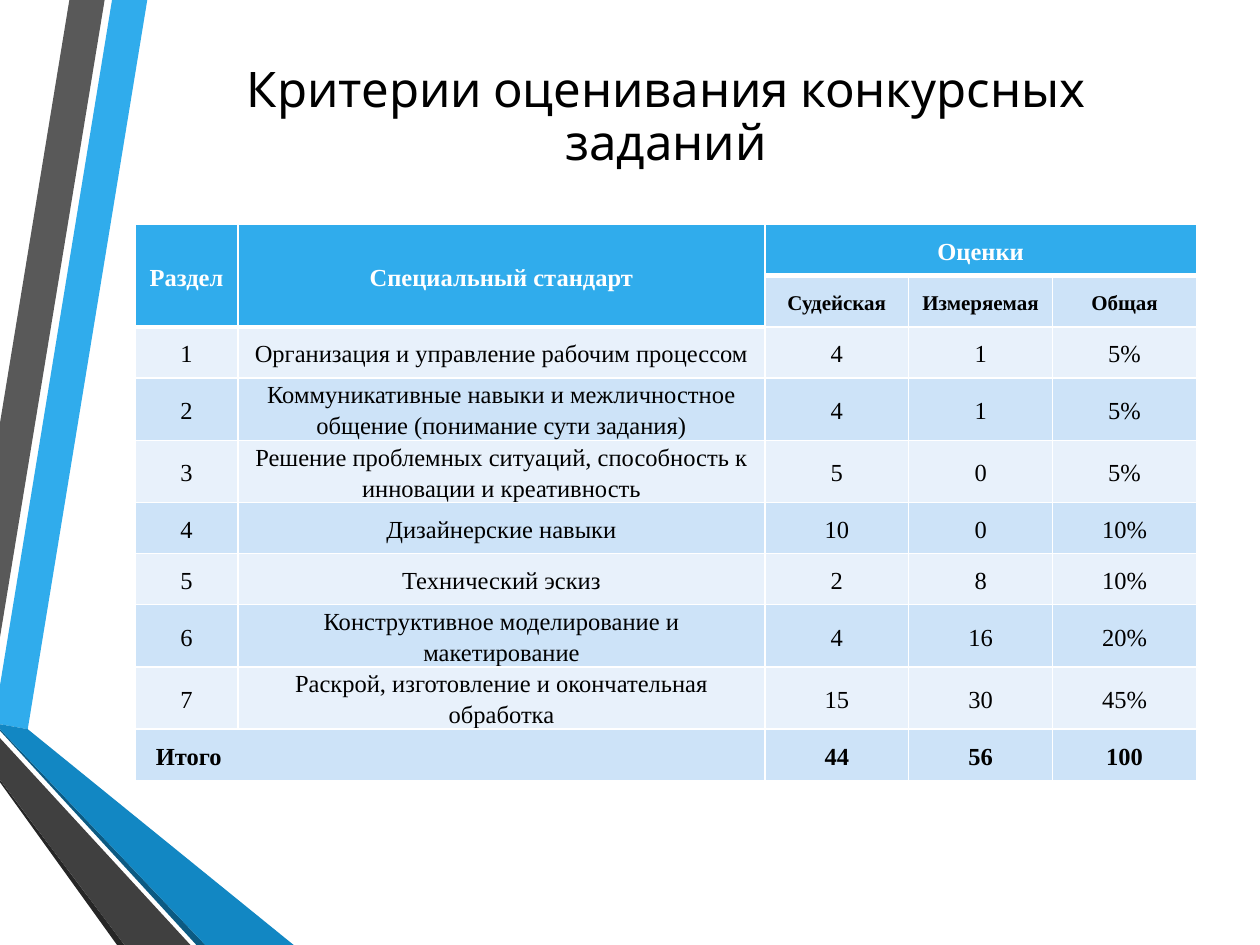
"""Build a slide with the scoring criteria table for competition tasks."""
from dataclasses import dataclass

from lxml import etree
from pptx import Presentation
from pptx import util as u
from pptx.dml.color import RGBColor
from pptx.enum import text
from pptx.oxml import ns


@dataclass(frozen=True)
class Theme:
    blue: str = "30ACEC"
    blue_mid: str = "1287C3"
    blue_dark: str = "0C5A82"
    gray: str = "595959"
    gray_mid: str = "404040"
    gray_dark: str = "262626"
    band: str = "CDE3F8"
    band_light: str = "E8F1FB"
    white: str = "FFFFFF"
    black: str = "000000"
    title_font: str = "Cabin"
    table_font: str = "Times New Roman"
    title_size: int = 28
    table_size: int = 14
    subhead_size: int = 12


def style_run(r, font, size, color, bold=False):
    r.font.name = font
    r.font.size = u.Pt(size)
    r.font.bold = bold
    r.font.color.rgb = RGBColor.from_string(color)


def add_border(cell, side, color, width):
    tc_pr = cell._tc.get_or_add_tcPr()
    ln = etree.SubElement(tc_pr, ns.qn(f"a:ln{side}"), w=str(u.Pt(width)))
    fill = etree.SubElement(ln, ns.qn("a:solidFill"))
    etree.SubElement(fill, ns.qn("a:srgbClr"), val=color)


theme = Theme()
prs = Presentation()
prs.slide_width, prs.slide_height = u.Cm(25.4), u.Cm(19.05)
s = prs.slides.add_slide(prs.slide_layouts[5])

ribbons = [
    (theme.blue, [(0, 13.82), (0, 14.6), (0.56, 14.7), (2.97, 0), (2.26, 0)]),
    (theme.gray, [(2.11, 0), (1.4, 0), (0, 8.53), (0, 12.85)]),
    (theme.gray_dark, [(0, 15.72), (0, 15.77), (2.36, 19.05), (2.51, 19.05)]),
    (theme.blue_dark, [(0, 14.7), (0, 14.73), (3.96, 19.05), (4.14, 19.05)]),
    (theme.blue_mid, [(0, 14.7), (4.14, 19.05), (5.92, 19.05), (0.56, 14.7), (0, 14.6)]),
    (theme.gray_mid, [(0, 15.72), (2.51, 19.05), (3.84, 19.05), (0, 14.88)]),
]
for color, points in ribbons:
    start, *rest = [(u.Cm(x), u.Cm(y)) for x, y in points]
    builder = s.shapes.build_freeform(*start)
    builder.add_line_segments(rest, close=True)
    sp = builder.convert_to_shape()
    sp.shadow.inherit = False
    sp.fill.solid()
    sp.fill.fore_color.rgb = RGBColor.from_string(color)
    sp.line.fill.background()

title = s.shapes.title
title.left, title.top = u.Cm(2.72), u.Cm(1.27)
title.width, title.height = u.Cm(21.41), u.Cm(2.24)
tf = title.text_frame
tf.text = "Критерии оценивания конкурсных заданий"
tf.word_wrap = True
tf.auto_size = text.MSO_AUTO_SIZE.NONE
tf.vertical_anchor = text.MSO_ANCHOR.MIDDLE
p = tf.paragraphs[0]
p.alignment = text.PP_ALIGN.CENTER
p.line_spacing = 0.9
style_run(p.runs[0], theme.title_font, theme.title_size, theme.black)

rows = [
    ("Раздел", "Специальный стандарт", "Оценки", "", ""),
    ("", "", "Судейская", "Измеряемая", "Общая"),
    ("1", "Организация и управление рабочим процессом", "4", "1", "5%"),
    ("2", "Коммуникативные навыки и межличностное общение (понимание сути задания)", "4", "1", "5%"),
    ("3", "Решение проблемных ситуаций, способность к инновации и креативность", "5", "0", "5%"),
    ("4", "Дизайнерские навыки", "10", "0", "10%"),
    ("5", "Технический эскиз", "2", "8", "10%"),
    ("6", "Конструктивное моделирование и макетирование", "4", "16", "20%"),
    ("7", "Раскрой, изготовление и окончательная обработка", "15", "30", "45%"),
    ("Итого", "", "44", "56", "100"),
]
col_widths = [2.08, 10.62, 2.9, 2.9, 2.9]
row_height = 1.03
last = len(rows) - 1

frame = s.shapes.add_table(len(rows), len(col_widths), u.Cm(2.72), u.Cm(4.53),
                           u.Cm(sum(col_widths)), u.Cm(row_height * len(rows)))
table = frame.table
for col, width in zip(table.columns, col_widths):
    col.width = u.Cm(width)
for row in table.rows:
    row.height = u.Cm(row_height)
for first, end in [((0, 0), (1, 0)), ((0, 1), (1, 1)), ((0, 2), (0, 4)), ((last, 0), (last, 1))]:
    table.cell(*first).merge(table.cell(*end))

for i, values in enumerate(rows):
    for j, value in enumerate(values):
        cell = table.cell(i, j)
        header = i == 0 or (i == 1 and j < 2)
        total_label = i == last and j == 0
        for side in "LRTB":
            add_border(cell, side, theme.white, 3 if header and side == "B" else 1)
        cell.fill.solid()
        fill = theme.blue if header else theme.band if i == 1 or i % 2 else theme.band_light
        cell.fill.fore_color.rgb = RGBColor.from_string(fill)
        cell.vertical_anchor = text.MSO_ANCHOR.MIDDLE
        cell.margin_left = u.Cm(0.42 if total_label else 0.18)
        cell.margin_right = u.Cm(0.18)
        cell.margin_top = cell.margin_bottom = 0
        cell.text_frame.text = value
        p = cell.text_frame.paragraphs[0]
        p.alignment = text.PP_ALIGN.LEFT if total_label else text.PP_ALIGN.CENTER
        p.line_spacing = 1.15
        for r in p.runs:
            style_run(r, theme.table_font,
                      theme.subhead_size if i == 1 else theme.table_size,
                      theme.white if header else theme.black,
                      bold=i in (0, 1, last))

prs.save("out.pptx")
